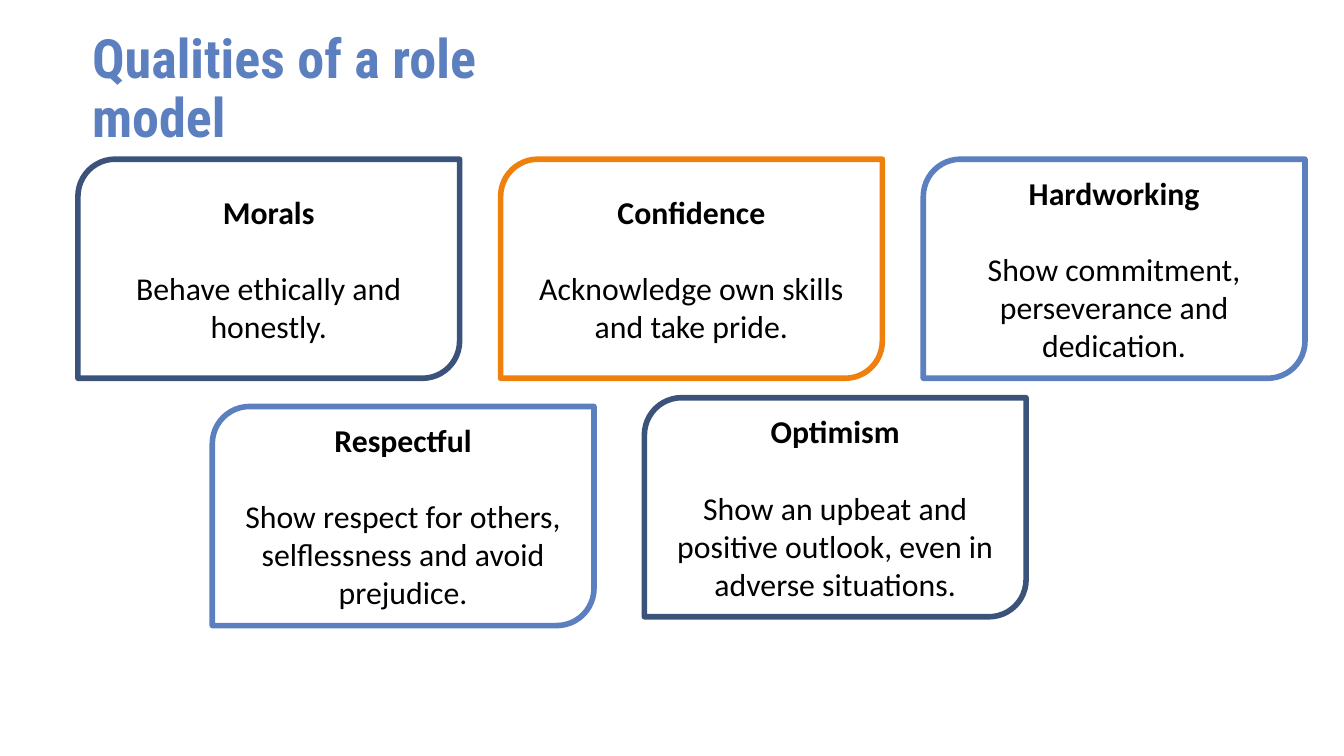
from pptx import Presentation
from pptx import util as u
from pptx.dml.color import RGBColor
from pptx.enum import shapes, text

PX = 4572
COLORS = {"navy": "3B527B", "orange": "F0800E", "blue": "5B7FBF", "black": "000000"}
CARD_WIDTH, CARD_HEIGHT = 568, 326
TOP_LEFT, TOP_STEP, TOP_ROW = 116, 629, 237

deck = Presentation()
deck.slide_width, deck.slide_height = 2000 * PX, 1125 * PX
page = deck.slides.add_slide(deck.slide_layouts[5])


def set_frame(frame, side, top):
    frame.word_wrap = True
    frame.auto_size = text.MSO_AUTO_SIZE.NONE
    frame.vertical_anchor = text.MSO_ANCHOR.MIDDLE
    frame.margin_left = frame.margin_right = side * PX
    frame.margin_top = frame.margin_bottom = top * PX


def set_font(para, name, size, color, bold):
    for span in para.runs:
        span.font.name = name
        span.font.size = u.Pt(size)
        span.font.bold = bold
        span.font.color.rgb = RGBColor.from_string(COLORS[color])


title = page.shapes.title
title.left, title.top, title.width, title.height = 122 * PX, 74 * PX, 734 * PX, 122 * PX
set_frame(title.text_frame, 15, 8)
title.text_frame.text = "Qualities of a role model"
heading = title.text_frame.paragraphs[0]
heading.alignment = text.PP_ALIGN.LEFT
heading.line_spacing = 0.9
heading.space_before = u.Pt(0)
set_font(heading, "Roboto Condensed", 29, "blue", True)

cards = [
    (TOP_LEFT, TOP_ROW, "navy", "Morals", "Behave ethically and honestly."),
    (TOP_LEFT + TOP_STEP, TOP_ROW, "orange", "Confidence",
     "Acknowledge own skills and take pride."),
    (TOP_LEFT + 2 * TOP_STEP, TOP_ROW, "blue", "Hardworking",
     "Show commitment, perseverance and dedication."),
    (316, 605, "blue", "Respectful",
     "Show respect for others, selflessness and avoid prejudice."),
    (959, 592, "navy", "Optimism",
     "Show an upbeat and positive outlook, even in adverse situations."),
]

for left, top, color, quality, meaning in cards:
    card = page.shapes.add_shape(shapes.MSO_SHAPE.ROUND_2_DIAG_RECTANGLE,
                                 left * PX, top * PX, CARD_WIDTH * PX, CARD_HEIGHT * PX)
    card.adjustments[0], card.adjustments[1] = 0.17, 0
    card.shadow.inherit = False
    card.fill.background()
    card.line.color.rgb = RGBColor.from_string(COLORS[color])
    card.line.width = u.Pt(3)
    frame = card.text_frame
    set_frame(frame, 20, 20)
    name = frame.paragraphs[0]
    name.text = quality
    detail = frame.add_paragraph()
    detail.text = meaning
    detail.space_before = u.Pt(20.5)
    for para, bold in ((name, True), (detail, False)):
        para.alignment = text.PP_ALIGN.CENTER
        set_font(para, "Calibri", 17, "black", bold)

deck.save("out.pptx")
